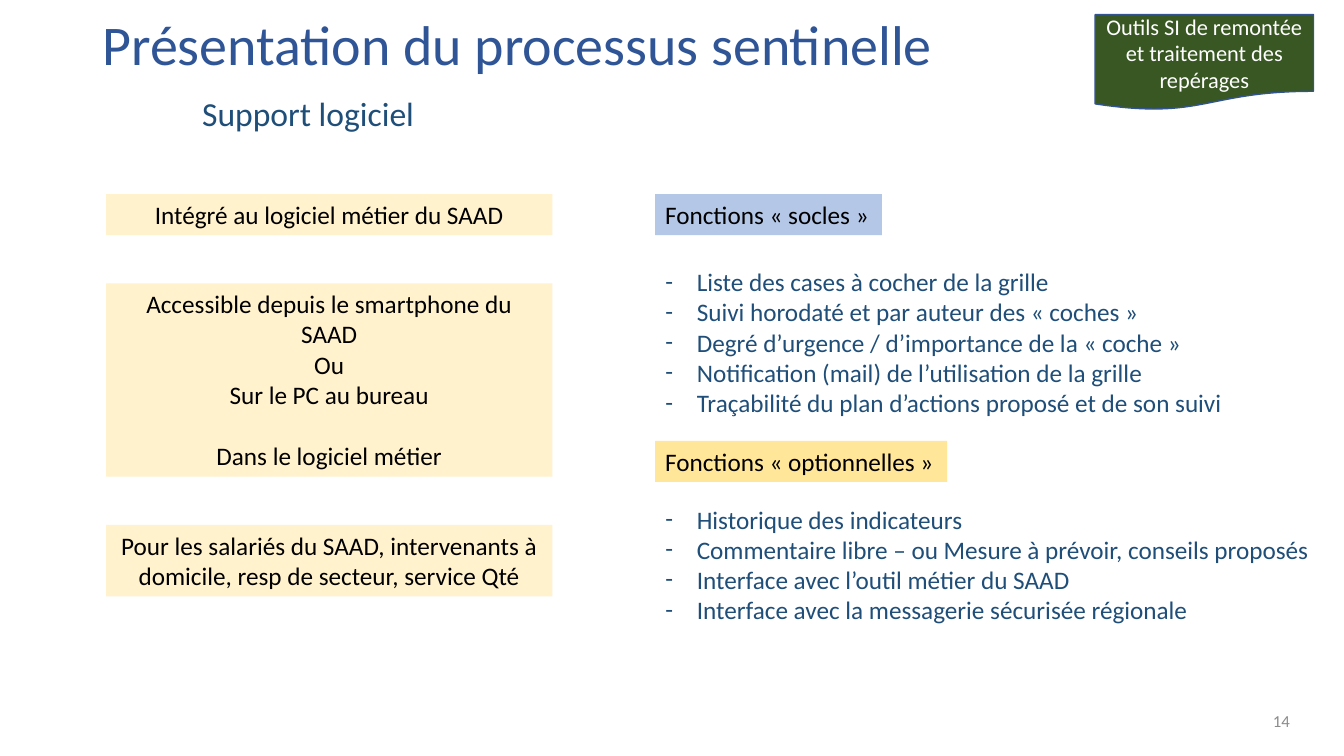
from dataclasses import dataclass
from typing import Optional

from lxml import etree
from pptx import Presentation
from pptx import util as u
from pptx.dml import color
from pptx.enum import shapes, text
from pptx.oxml import ns

EMU_PER_PX = 9525
LEFT_X, LEFT_WIDTH = 101, 425
RIGHT_X = 624
TOP_ROW, ROW_GAP = 185, 46
LABEL_HEIGHT = 39
LIST_INDENT = 30


@dataclass(frozen=True)
class Theme:
    font: str = "Calibri"
    title: str = "2F5597"
    navy: str = "1F4E79"
    black: str = "000000"
    white: str = "FFFFFF"
    grey: str = "8C8C8C"
    cream: str = "FFF2CC"
    blue: str = "B4C7E7"
    yellow: str = "FFE699"
    green: str = "385723"
    outline: str = "325491"
    title_size: int = 40
    subtitle_size: int = 24
    body_size: int = 18
    badge_size: int = 16
    number_size: int = 12


@dataclass(frozen=True)
class Box:
    x: int
    y: int
    width: int
    height: int


@dataclass(frozen=True)
class Support:
    lines: list[str]
    height: int
    last_line_gap: int = 0


@dataclass(frozen=True)
class Functions:
    heading: str
    heading_box: Box
    fill: str
    items: list[str]
    items_box: Box


THEME = Theme()

SUPPORTS = [
    Support(["Intégré au logiciel métier du SAAD"], LABEL_HEIGHT),
    Support(["Accessible depuis le smartphone du SAAD", "Ou", "Sur le PC au bureau",
             "Dans le logiciel métier"], 184, last_line_gap=22),
    Support(["Pour les salariés du SAAD, intervenants à domicile, "
             "resp de secteur, service Qté"], 68),
]

FUNCTIONS = [
    Functions("Fonctions « socles »", Box(RIGHT_X, TOP_ROW, 216, LABEL_HEIGHT), THEME.blue,
              ["Liste des cases à cocher de la grille",
               "Suivi horodaté et par auteur des « coches »",
               "Degré d’urgence / d’importance de la « coche »",
               "Notification (mail) de l’utilisation de la grille",
               "Traçabilité du plan d’actions proposé et de son suivi"],
              Box(RIGHT_X, 249, 556, 184)),
    Functions("Fonctions « optionnelles »", Box(RIGHT_X, 420, 278, LABEL_HEIGHT), THEME.yellow,
              ["Historique des indicateurs",
               "Commentaire libre – ou Mesure à prévoir, conseils proposés",
               "Interface avec l’outil métier du SAAD",
               "Interface avec la messagerie sécurisée régionale"],
              Box(RIGHT_X, 475, 639, 126)),
]


def px(length: int) -> u.Emu:
    return u.Emu(length * EMU_PER_PX)


def bounds(box: Box) -> tuple[u.Emu, u.Emu, u.Emu, u.Emu]:
    return px(box.x), px(box.y), px(box.width), px(box.height)


def place(placeholder, box: Box) -> None:
    placeholder.left, placeholder.top, placeholder.width, placeholder.height = bounds(box)


def add_dash(paragraph) -> None:
    properties = paragraph._p.get_or_add_pPr()
    properties.set("marL", str(px(LIST_INDENT)))
    properties.set("indent", str(-px(LIST_INDENT)))
    etree.SubElement(properties, ns.qn("a:buFont"), typeface=THEME.font)
    etree.SubElement(properties, ns.qn("a:buChar"), char="-")


def write(shape, lines: list[str], *, size: int = THEME.body_size, ink: str = THEME.black,
          align=text.PP_ALIGN.LEFT, anchor=text.MSO_ANCHOR.TOP, wrap: bool = True,
          dashes: bool = False, spacing: float = 1.0, last_line_gap: int = 0) -> None:
    frame = shape.text_frame
    frame.auto_size = text.MSO_AUTO_SIZE.NONE
    frame.word_wrap = wrap
    frame.vertical_anchor = anchor
    for index, line in enumerate(lines):
        paragraph = frame.add_paragraph() if index else frame.paragraphs[0]
        if dashes:
            add_dash(paragraph)
        paragraph.alignment = align
        paragraph.line_spacing = spacing
        is_last = index == len(lines) - 1
        paragraph.space_before = u.Pt(last_line_gap if is_last else 0)
        run = paragraph.add_run()
        run.text = line
        run.font.name = THEME.font
        run.font.size = u.Pt(size)
        run.font.color.rgb = color.RGBColor.from_string(ink)


def add_panel(slide, box: Box, fill: str, line: Optional[str] = None,
              kind=shapes.MSO_SHAPE.RECTANGLE):
    panel = slide.shapes.add_shape(kind, *bounds(box))
    panel.shadow.inherit = False
    panel.fill.solid()
    panel.fill.fore_color.rgb = color.RGBColor.from_string(fill)
    if line:
        panel.line.color.rgb = color.RGBColor.from_string(line)
        panel.line.width = u.Pt(1)
    else:
        panel.line.fill.background()
    return panel


def add_supports(slide) -> None:
    y = TOP_ROW
    for support in SUPPORTS:
        panel = add_panel(slide, Box(LEFT_X, y, LEFT_WIDTH, support.height), THEME.cream)
        write(panel, support.lines, align=text.PP_ALIGN.CENTER,
              last_line_gap=support.last_line_gap)
        y += support.height + ROW_GAP


def add_functions(slide) -> None:
    _, *bodies = slide.placeholders
    for functions, body in zip(FUNCTIONS, bodies):
        heading = add_panel(slide, functions.heading_box, functions.fill)
        write(heading, [functions.heading], wrap=False)
        place(body, functions.items_box)
        write(body, functions.items, ink=THEME.navy, wrap=False, dashes=True)


def main() -> None:
    deck = Presentation()
    deck.slide_width, deck.slide_height = px(1280), px(720)
    slide = deck.slides.add_slide(deck.slide_layouts.get_by_name("Two Content"))

    title = slide.shapes.title
    place(title, Box(88, 19, 1098, 52))
    write(title, ["Présentation du processus sentinelle"], size=THEME.title_size,
          ink=THEME.title, anchor=text.MSO_ANCHOR.MIDDLE, spacing=0.9)

    subtitle = slide.shapes.add_textbox(*bounds(Box(182, 84, 223, 48)))
    write(subtitle, ["Support logiciel"], size=THEME.subtitle_size, ink=THEME.navy,
          align=text.PP_ALIGN.CENTER, wrap=False)

    add_supports(slide)
    add_functions(slide)

    badge = add_panel(slide, Box(1043, 14, 208, 91), THEME.green, THEME.outline,
                      shapes.MSO_SHAPE.FLOWCHART_DOCUMENT)
    write(badge, ["Outils SI de remontée et traitement des repérages"], size=THEME.badge_size,
          ink=THEME.white, align=text.PP_ALIGN.CENTER, anchor=text.MSO_ANCHOR.MIDDLE)

    number = slide.shapes.add_textbox(*bounds(Box(1192, 667, 46, 38)))
    write(number, ["14"], size=THEME.number_size, ink=THEME.grey,
          align=text.PP_ALIGN.RIGHT, anchor=text.MSO_ANCHOR.MIDDLE)

    deck.save("out.pptx")


if __name__ == "__main__":
    main()
